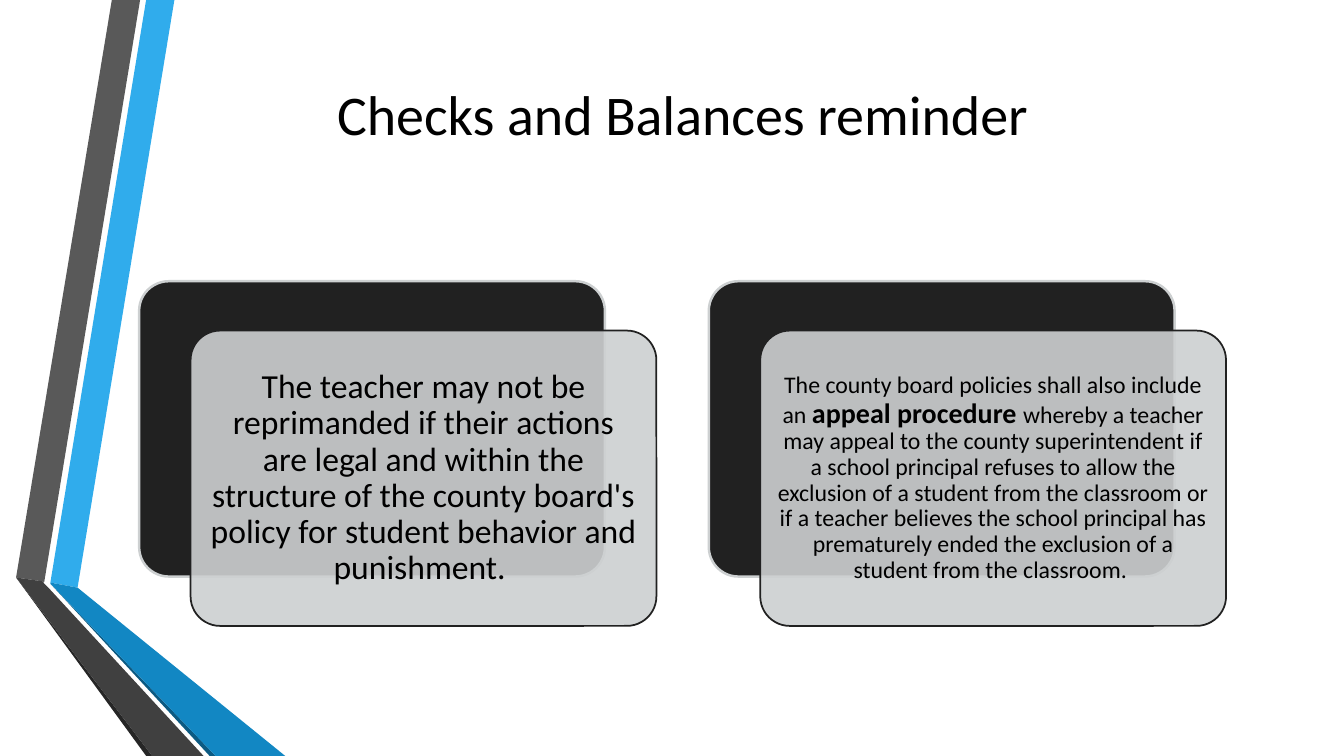
from lxml import etree
from pptx import Presentation
from pptx.dml.color import RGBColor
from pptx.enum.shapes import MSO_SHAPE
from pptx.enum.text import MSO_ANCHOR, PP_ALIGN
from pptx.oxml.ns import qn
from pptx.util import Inches, Pt

ROUND = MSO_SHAPE.ROUNDED_RECTANGLE
MIDDLE = MSO_ANCHOR.MIDDLE
CENTER = PP_ALIGN.CENTER
TITLE_ONLY = 5
FONT = "Calibri"

TITLE = "Checks and Balances reminder"
# Each card: inset in inches, then runs of (text, size, bold)
CARDS = [
    (0.1, [
        ("The teacher may not be reprimanded if their actions are legal and within "
         "the structure of the county board's policy for student behavior and "
         "punishment. ", 24, False),
    ]),
    (0.07, [
        ("The county board policies shall also include an ", 17, False),
        ("appeal procedure ", 20, True),
        ("whereby a teacher may appeal to the county superintendent if a school "
         "principal refuses to allow the exclusion of a student from the classroom "
         "or if a teacher believes the school principal has prematurely ended the "
         "exclusion of a student from the classroom. ", 17, False),
    ]),
]
COLORS = {
    "text": "000000", "dark": "212121", "light": "CDD0D1",
    "blue": "30ACEC", "blue_fold": "1287C3", "blue_edge": "0C5A82",
    "gray": "595959", "gray_fold": "404040", "gray_edge": "262626",
}
# Ribbon outlines in hundredths of an inch
RIBBONS = [
    ("blue", [(50, 578), (77, 583), (173, 0), (145, 0)]),
    ("gray", [(139, 0), (111, 0), (16, 573), (44, 577)]),
    ("gray_edge", [(16, 573), (145, 750), (151, 750)]),
    ("blue_edge", [(50, 579), (208, 750), (214, 750)]),
    ("blue_fold", [(50, 579), (214, 750), (283, 750), (77, 583), (50, 578)]),
    ("gray_fold", [(202, 750), (48, 583), (43, 578), (44, 577), (16, 573), (151, 750)]),
]

WIDTH, HEIGHT = 13.33, 7.5
LEFT, CONTENT_W = 1.38, 10.78
TITLE_TOP, TITLE_H = 0.4, 1.45
CARD_TOP, CARD_W, CARD_H = 2.79, 4.62, 2.93
SHIFT_X, SHIFT_Y = 0.51, 0.49
PITCH = CONTENT_W - CARD_W - SHIFT_X


def rgb(name):
    return RGBColor.from_string(COLORS[name])


def add_run(p, text, size, bold=False):
    r = p.add_run()
    r.text = text
    for key, value in dict(name=FONT, size=Pt(size), bold=bold).items():
        setattr(r.font, key, value)
    r.font.color.rgb = rgb("text")


def add_ribbon(slide, color, points):
    builder = slide.shapes.build_freeform(*points[0], scale=Inches(0.01))
    builder.add_line_segments(points[1:], close=True)
    sp = builder.convert_to_shape()
    sp.shadow.inherit = False
    sp.fill.solid()
    sp.fill.fore_color.rgb = rgb(color)
    sp.line.fill.background()


def add_panel(slide, x, y, fill, line, weight):
    sp = slide.shapes.add_shape(ROUND, *map(Inches, (x, y, CARD_W, CARD_H)))
    sp.adjustments[0] = 0.1
    sp.shadow.inherit = False
    sp.fill.solid()
    sp.fill.fore_color.rgb = rgb(fill)
    sp.line.color.rgb = rgb(line)
    sp.line.width = Pt(weight)
    return sp


def add_card(slide, x, inset, runs):
    add_panel(slide, x, CARD_TOP, "dark", "light", 1.75)
    front = add_panel(slide, x + SHIFT_X, CARD_TOP + SHIFT_Y, "light", "dark", 1.25)
    fill = front.fill._xPr.find(qn("a:solidFill"))
    etree.SubElement(fill[0], qn("a:alpha"), val="90000")

    tf = front.text_frame
    tf.word_wrap = True
    tf.vertical_anchor = MIDDLE
    for side in ("left", "top", "right", "bottom"):
        setattr(tf, f"margin_{side}", Inches(inset))
    p = tf.paragraphs[0]
    p.alignment = CENTER
    p.line_spacing = 0.9
    for run in runs:
        add_run(p, *run)


def main():
    prs = Presentation()
    prs.slide_width, prs.slide_height = Inches(WIDTH), Inches(HEIGHT)
    slide = prs.slides.add_slide(prs.slide_layouts[TITLE_ONLY])

    for color, points in RIBBONS:
        add_ribbon(slide, color, points)

    title = slide.shapes.title
    box = dict(left=LEFT, top=TITLE_TOP, width=CONTENT_W, height=TITLE_H)
    for key, value in box.items():
        setattr(title, key, Inches(value))
    title.text_frame.vertical_anchor = MIDDLE
    p = title.text_frame.paragraphs[0]
    p.alignment = CENTER
    add_run(p, TITLE, 40)

    for i, (inset, runs) in enumerate(CARDS):
        add_card(slide, LEFT + i * PITCH, inset, runs)
    prs.save("out.pptx")


if __name__ == "__main__":
    main()
